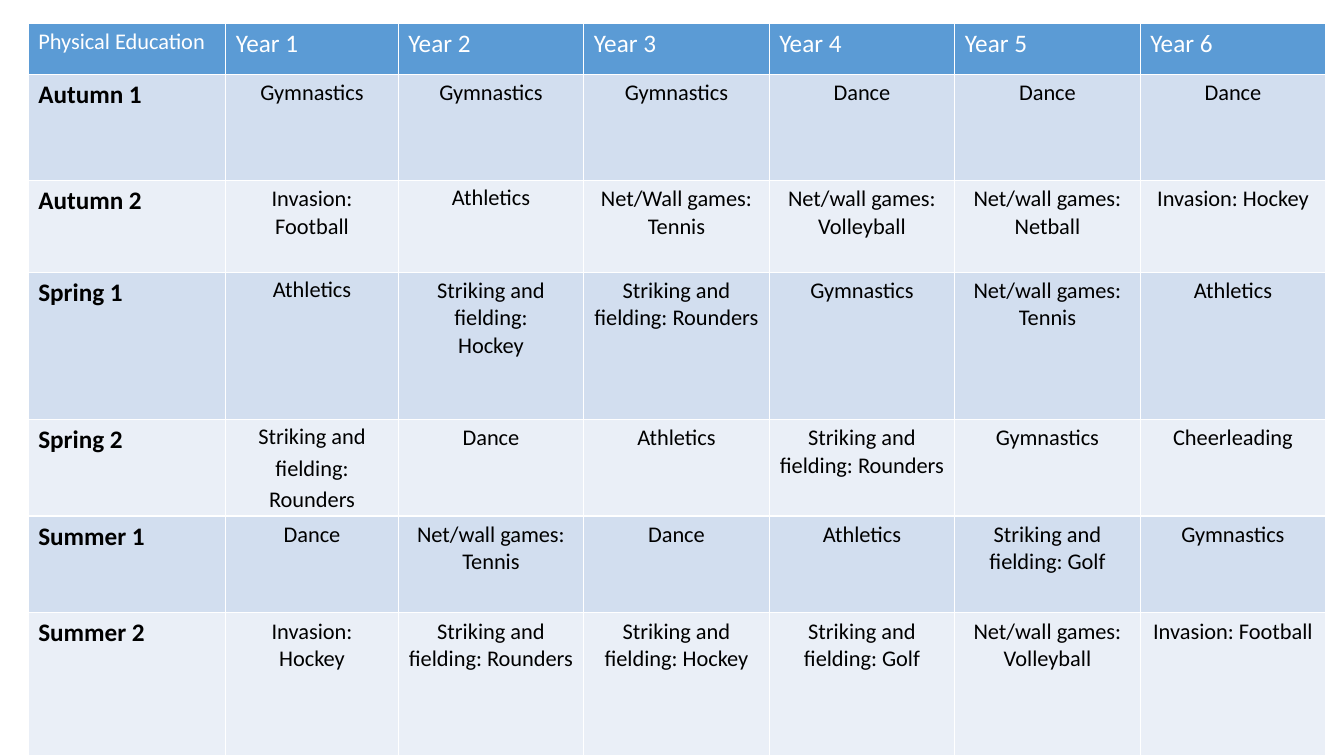
"""Build a one-slide physical education curriculum table."""
from pptx import Presentation
from pptx.dml.color import RGBColor
from pptx.enum.text import PP_ALIGN
from pptx.util import Inches, Pt

LEFT, CENTER = PP_ALIGN.LEFT, PP_ALIGN.CENTER
THEME = {
    "font": "Calibri",
    "heading": Pt(18),
    "body": Pt(16),
    "header_fill": RGBColor.from_string("5B9BD5"),
    "bands": [RGBColor.from_string("EAEFF7"), RGBColor.from_string("D2DEEF")],
    "header_text": RGBColor.from_string("FFFFFF"),
    "text": RGBColor.from_string("000000"),
}
CURRICULUM = [
    ["Physical Education"] + [f"Year {year}" for year in range(1, 7)],
    ["Autumn 1", "Gymnastics", "Gymnastics", "Gymnastics", "Dance", "Dance", "Dance"],
    ["Autumn 2", "Invasion: Football", "Athletics", "Net/Wall games: Tennis",
     "Net/wall games: Volleyball", "Net/wall games: Netball", "Invasion: Hockey"],
    ["Spring 1", "Athletics", "Striking and fielding:\nHockey",
     "Striking and fielding: Rounders", "Gymnastics", "Net/wall games: Tennis", "Athletics"],
    ["Spring 2", "Striking and fielding: Rounders", "Dance", "Athletics",
     "Striking and fielding: Rounders", "Gymnastics", "Cheerleading"],
    ["Summer 1", "Dance", "Net/wall games: Tennis", "Dance", "Athletics",
     "Striking and fielding: Golf", "Gymnastics"],
    ["Summer 2", "Invasion:\nHockey", "Striking and fielding: Rounders",
     "Striking and fielding: Hockey", "Striking and fielding: Golf",
     "Net/wall games: Volleyball", "Invasion: Football"],
]
COLUMN_WIDTHS = [1.96, 1.71] + [1.84] * 5
ROW_HEIGHTS = [0.51, 1.05, 0.91, 1.46, 0.96, 0.96, 1.42]
SPACED_CELLS = {(1, 1), (2, 2), (3, 1), (4, 1)}

deck = Presentation()
deck.slide_width, deck.slide_height = Inches(13.33), Inches(7.5)
page = deck.slides.add_slide(deck.slide_layouts[6])
table = page.shapes.add_table(
    len(ROW_HEIGHTS), len(COLUMN_WIDTHS), Inches(0.28), Inches(0.23),
    Inches(sum(COLUMN_WIDTHS)), Inches(sum(ROW_HEIGHTS))).table

for column, width in zip(table.columns, COLUMN_WIDTHS):
    column.width = Inches(width)
for row, height in zip(table.rows, ROW_HEIGHTS):
    row.height = Inches(height)

for row_index, entries in enumerate(CURRICULUM):
    for column_index, entry in enumerate(entries):
        is_header, is_term = row_index == 0, column_index == 0
        is_spaced = (row_index, column_index) in SPACED_CELLS
        cell = table.cell(row_index, column_index)
        cell.text = entry
        cell.fill.solid()
        cell.fill.fore_color.rgb = THEME["header_fill"] if is_header else THEME["bands"][row_index % 2]
        if is_spaced:
            cell.margin_left = cell.margin_right = Inches(0.12)
            cell.margin_top = cell.margin_bottom = 0
        for para in cell.text_frame.paragraphs:
            para.alignment = LEFT if is_header or is_term else CENTER
            para.font.name = THEME["font"]
            para.font.size = THEME["heading"] if is_header != is_term else THEME["body"]
            para.font.bold = is_term and not is_header
            para.font.color.rgb = THEME["header_text"] if is_header else THEME["text"]
            if is_spaced:
                para.line_spacing = 1.15
                para.space_after = Pt(10)

deck.save("out.pptx")
